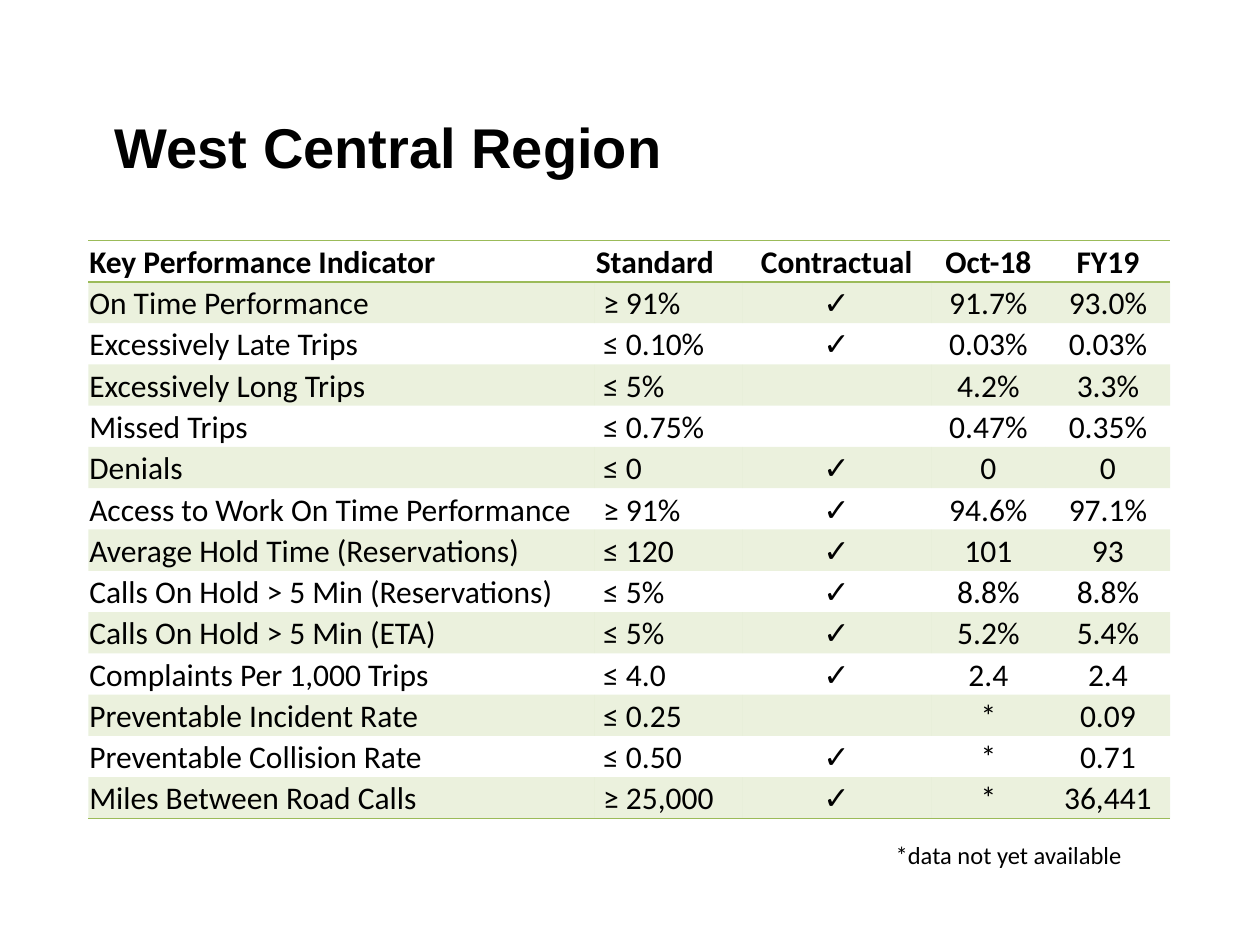
from lxml import etree
from pptx import Presentation
from pptx.dml.color import RGBColor
from pptx.enum.text import MSO_ANCHOR, MSO_AUTO_SIZE, PP_ALIGN
from pptx.oxml.ns import qn
from pptx.util import Cm, Pt

LEFT, CENTER, RIGHT = PP_ALIGN.LEFT, PP_ALIGN.CENTER, PP_ALIGN.RIGHT
MIDDLE, BOTTOM = MSO_ANCHOR.MIDDLE, MSO_ANCHOR.BOTTOM
FIT_SHAPE = MSO_AUTO_SIZE.SHAPE_TO_FIT_TEXT

COLORS = {"text": "000000", "accent": "9BBB59"}
PLAIN_TABLE_STYLE = "{2D5ABB26-0587-4C30-8999-92F81FD0307C}"
BAND_OPACITY = 20
CHECK = "✓"

COLUMN_WIDTHS = [10.21, 2.97, 3.81, 2.31, 2.51]
COLUMN_ALIGNMENTS = [LEFT, LEFT, CENTER, CENTER, CENTER]
STANDARD_COLUMN = 1
HEADINGS = ["Key Performance Indicator", "Standard", "Contractual", "Oct-18", "FY19"]
INDICATORS = [
    ["On Time Performance", "≥ 91%", CHECK, "91.7%", "93.0%"],
    ["Excessively Late Trips", "≤ 0.10%", CHECK, "0.03%", "0.03%"],
    ["Excessively Long Trips", "≤ 5%", "", "4.2%", "3.3%"],
    ["Missed Trips", "≤ 0.75%", "", "0.47%", "0.35%"],
    ["Denials", "≤ 0", CHECK, "0", "0"],
    ["Access to Work On Time Performance", "≥ 91%", CHECK, "94.6%", "97.1%"],
    ["Average Hold Time (Reservations)", "≤ 120", CHECK, "101", "93"],
    ["Calls On Hold > 5 Min (Reservations)", "≤ 5%", CHECK, "8.8%", "8.8%"],
    ["Calls On Hold > 5 Min (ETA)", "≤ 5%", CHECK, "5.2%", "5.4%"],
    ["Complaints Per 1,000 Trips", "≤ 4.0", CHECK, "2.4", "2.4"],
    ["Preventable Incident Rate", "≤ 0.25", "", "*", "0.09"],
    ["Preventable Collision Rate", "≤ 0.50", CHECK, "*", "0.71"],
    ["Miles Between Road Calls", "≥ 25,000", CHECK, "*", "36,441"],
]


def add_text(paragraph, text, font, size, alignment=LEFT, bold=False):
    paragraph.alignment = alignment
    if not text:
        return
    run = paragraph.add_run()
    run.text = text
    run.font.name = font
    run.font.size = Pt(size)
    run.font.bold = bold
    run.font.color.rgb = RGBColor.from_string(COLORS["text"])


def add_rule(cell, tag):
    rule = etree.SubElement(cell._tc.get_or_add_tcPr(), qn(tag), w=str(Pt(1)))
    fill = etree.SubElement(rule, qn("a:solidFill"))
    etree.SubElement(fill, qn("a:srgbClr"), val=COLORS["accent"])


def fill_band(cell):
    cell.fill.solid()
    cell.fill.fore_color.rgb = RGBColor.from_string(COLORS["accent"])
    color = cell._tc.tcPr.find(".//" + qn("a:solidFill") + "/" + qn("a:srgbClr"))
    if cell._tc.tcPr.find(qn("a:solidFill")) is not None:
        color = cell._tc.tcPr.find(qn("a:solidFill")).find(qn("a:srgbClr"))
    etree.SubElement(color, qn("a:alpha"), val=str(BAND_OPACITY * 1000))


def place_title(slide, left, top, width, height):
    title = slide.shapes.title
    title.left, title.top, title.width, title.height = left, top, width, height
    title.text_frame.vertical_anchor = MIDDLE
    add_text(title.text_frame.paragraphs[0], "West Central Region", "Arial", 32, bold=True)


def place_indicators(slide, left, top, width, height):
    rows = [HEADINGS] + INDICATORS
    table = slide.shapes.add_table(len(rows), len(HEADINGS), left, top, width, height).table
    table.first_row = table.horz_banding = False
    table._tbl.tblPr.find(qn("a:tableStyleId")).text = PLAIN_TABLE_STYLE
    for column, column_width in zip(table.columns, COLUMN_WIDTHS):
        column.width = Cm(column_width)

    for r, values in enumerate(rows):
        is_heading = r == 0
        for c, (value, alignment) in enumerate(zip(values, COLUMN_ALIGNMENTS)):
            cell = table.cell(r, c)
            cell.vertical_anchor = BOTTOM
            is_indented = c == STANDARD_COLUMN and not is_heading
            cell.margin_left = Cm(0.17 if is_indented else 0.02)
            cell.margin_right = cell.margin_top = Cm(0.02)
            cell.margin_bottom = 0
            add_text(cell.text_frame.paragraphs[0], value, "Calibri", 18, alignment, is_heading)
            if is_heading:
                add_rule(cell, "a:lnT")
            if is_heading or r == len(rows) - 1:
                add_rule(cell, "a:lnB")
            if r % 2:
                fill_band(cell)
            else:
                cell.fill.background()


def place_footnote(slide, left, top, width, height):
    frame = slide.shapes.add_textbox(left, top, width, height).text_frame
    frame.word_wrap = True
    frame.auto_size = FIT_SHAPE
    add_text(frame.paragraphs[0], "*data not yet available", "Calibri", 14, RIGHT)


def main():
    presentation = Presentation()
    presentation.slide_width, presentation.slide_height = Cm(25.4), Cm(19.05)
    slide = presentation.slides.add_slide(presentation.slide_layouts[5])
    place_title(slide, Cm(2.06), Cm(2.13), Cm(21.31), Cm(1.63))
    place_indicators(slide, Cm(1.78), Cm(4.85), Cm(sum(COLUMN_WIDTHS)), Cm(11.66))
    place_footnote(slide, Cm(16.36), Cm(16.81), Cm(6.5), Cm(0.86))
    presentation.save("out.pptx")


if __name__ == "__main__":
    main()
